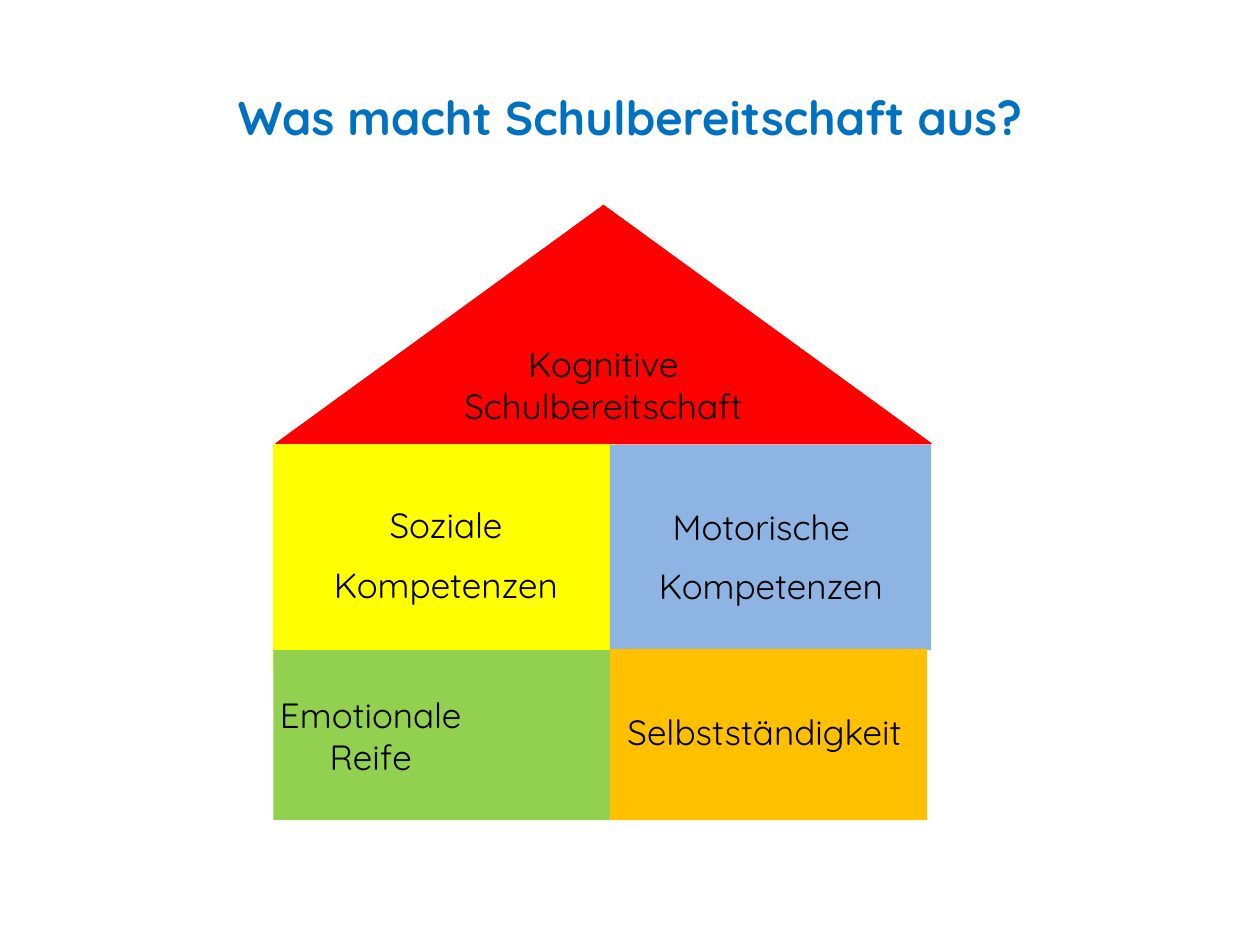
from pptx import Presentation
from pptx.dml.color import RGBColor as Rgb
from pptx.enum.shapes import MSO_SHAPE as Kind
from pptx.enum.text import MSO_ANCHOR as Anchor, PP_ALIGN as Align
from pptx.util import Pt

HUES = {"title": "0070C0", "text": "000000", "roof": "FF0000",
        "social": "FFFF00", "motor": "8EB4E3", "mood": "92D050",
        "self": "FFC000"}


class House:
    font = "Quicksand"
    size = 20

    def __init__(self, deck):
        self.slide = deck.slides.add_slide(deck.slide_layouts[5])

    def letter(self, frame, lines, align=Align.CENTER, gap=0, size=size,
               hue="text", bold=False):
        frame.text = "\n".join(lines)
        for i, para in enumerate(frame.paragraphs):
            para.alignment = align
            para.space_before = Pt(gap if i else 0)
            font = para.font
            font.name, font.size, font.bold = self.font, Pt(size), bold
            font.color.rgb = Rgb.from_string(HUES[hue])

    def title(self, text, x, y, w, h):
        head = self.slide.shapes.title
        head.left, head.top, head.width, head.height = map(Pt, (x, y, w, h))
        head.text_frame.vertical_anchor = Anchor.MIDDLE
        self.letter(head.text_frame, [text], size=27, hue="title", bold=True)

    def block(self, hue, x, y, w, h, kind=Kind.RECTANGLE, edge=False):
        part = self.slide.shapes.add_shape(kind, *map(Pt, (x, y, w, h)))
        part.shadow.inherit = False
        part.fill.solid()
        part.fill.fore_color.rgb = Rgb.from_string(HUES[hue])
        if edge:
            part.line.color.rgb = Rgb.from_string(HUES[hue])
            part.line.width = Pt(0.75)
        else:
            part.line.fill.background()
        frame = part.text_frame
        frame.vertical_anchor = Anchor.MIDDLE
        return frame

    def label(self, lines, x, y, w, h, **style):
        box = self.slide.shapes.add_textbox(*map(Pt, (x, y, w, h)))
        box.text_frame.word_wrap = True
        self.letter(box.text_frame, lines, **style)


def main():
    deck = Presentation()
    deck.slide_width, deck.slide_height = Pt(720), Pt(540)
    house = House(deck)
    left, mid, top, floor = 156.3, 348.5, 254.2, 371.2

    house.title("Was macht Schulbereitschaft aus?", 36, 21.6, 648, 90)

    roof = house.block("roof", 157.7, 117.4, 374.4, 136.1,
                       Kind.ISOSCELES_TRIANGLE, edge=True)
    roof.word_wrap = False
    house.letter(roof, ["Kognitive", "Schulbereitschaft"])

    house.block("social", left, top, 195.1, 128.9, edge=True)
    house.block("motor", mid, top, 183.6, 117.4)
    house.label(["Soziale", "Kompetenzen"], 169.9, 284.4, 169.9, 67.7, gap=10)

    mood = house.block("mood", left, floor + 0.3, mid - left, 97.2)
    mood.word_wrap = True
    mood.margin_left, mood.margin_right = Pt(0), Pt(75.6)
    house.letter(mood, ["Emotionale ", "Reife "])

    house.label(["Motorische ", " Kompetenzen"], 358.6, 285.1, 158.4, 67.7,
                gap=10)
    house.block("self", mid, floor - 0.4, 181.4, 97.9)
    house.label(["Selbstständigkeit"], 351.4, 402.5, 177.8, 31.7,
                align=Align.LEFT)
    deck.save("out.pptx")


if __name__ == "__main__":
    main()
